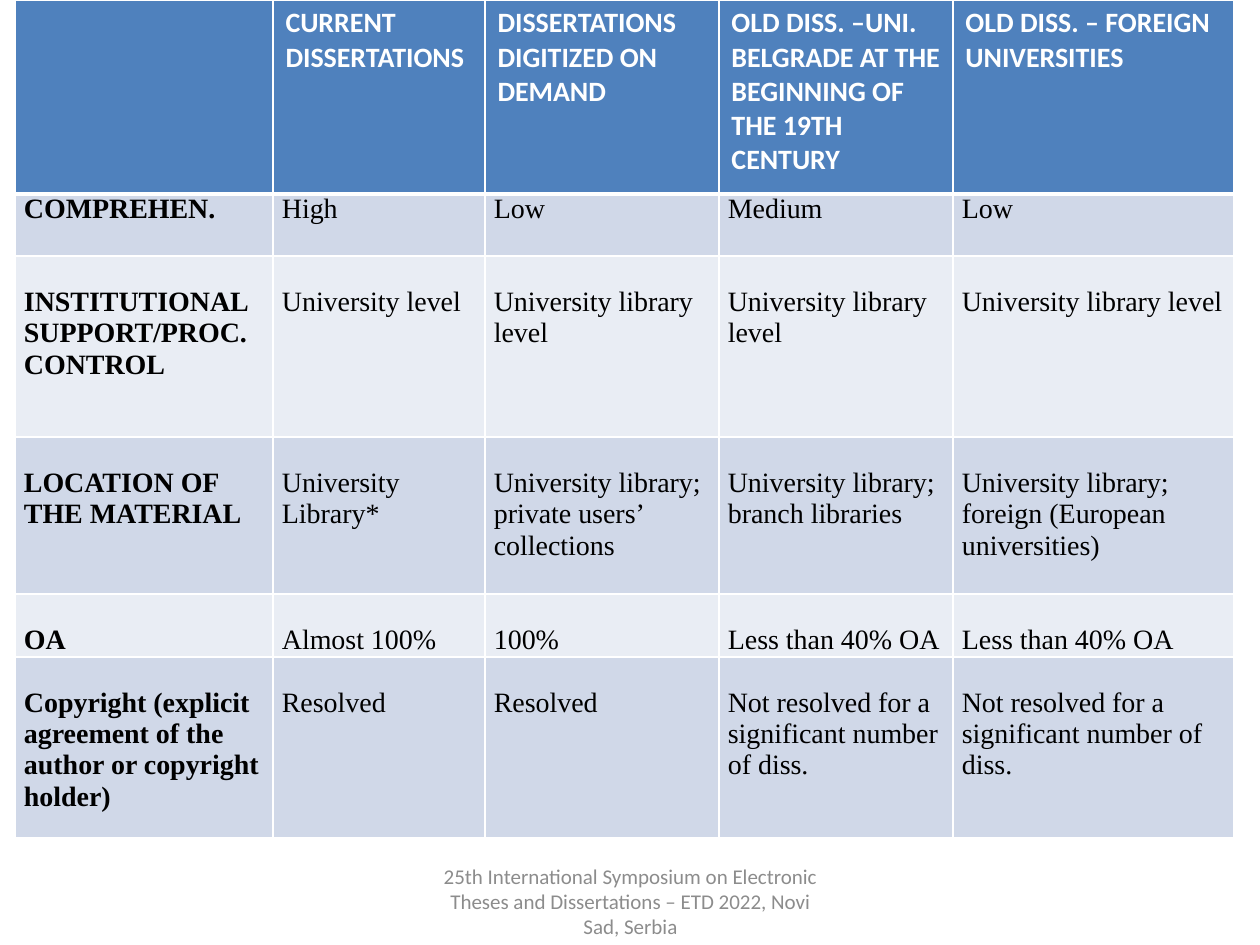
from dataclasses import dataclass

from lxml.etree import SubElement
from pptx import Presentation
from pptx.dml.color import RGBColor
from pptx.enum.text import MSO_ANCHOR, PP_ALIGN
from pptx.oxml.ns import qn
from pptx.util import Pt

EMU_PER_PX = 914400 / 126


def px(length: int) -> int:
    return round(length * EMU_PER_PX)


@dataclass(frozen=True)
class Theme:
    header_fill: str = "4F81BD"
    bands: tuple = ("D0D8E8", "E9EDF4")
    border: str = "FFFFFF"
    header_text: str = "FFFFFF"
    body_text: str = "000000"
    footer_text: str = "8C8C8C"
    sans: str = "Calibri"
    serif: str = "Times New Roman"
    table_size: int = 16
    footer_size: int = 12
    thin: int = 1
    thick: int = 3


@dataclass(frozen=True)
class Criterion:
    height: int
    top_inset: int
    label: str
    values: tuple


THEME = Theme()
COLUMN_WIDTHS = (258, 212, 234, 234, 281)
HEADER_HEIGHT = 194
LINE = 31
SIDE_INSET = 9
HEADINGS = (
    "",
    "CURRENT DISSERTATIONS",
    "DISSERTATIONS DIGITIZED ON DEMAND",
    "OLD DISS. –UNI. BELGRADE AT THE BEGINNING OF THE 19TH CENTURY",
    "OLD DISS. – FOREIGN UNIVERSITIES",
)
CRITERIA = (
    Criterion(62, 0, "COMPREHEN.", ("High", "Low", "Medium", "Low")),
    Criterion(181, LINE, "INSTITUTIONAL SUPPORT/PROC. CONTROL",
              ("University level",) + ("University library level",) * 3),
    Criterion(157, LINE, "LOCATION OF THE MATERIAL",
              ("University Library*",
               "University library; private users’ collections",
               "University library; branch libraries",
               "University library; foreign (European universities)")),
    Criterion(63, LINE, "OA",
              ("Almost 100%", "100%") + ("Less than 40% OA",) * 2),
    Criterion(181, LINE,
              "Copyright (explicit agreement of the author or copyright holder)",
              ("Resolved",) * 2
              + ("Not resolved for a significant number of diss.",) * 2),
)
FOOTER = ("25th International Symposium on Electronic Theses and "
          "Dissertations – ETD 2022, Novi Sad, Serbia")


def apply_format(target, values: dict) -> None:
    for attribute, value in values.items():
        setattr(target, attribute, value)


def format_font(font, name: str, size: int, color: str, bold: bool) -> None:
    apply_format(font, {"name": name, "size": Pt(size), "bold": bold})
    font.color.rgb = RGBColor.from_string(color)


def set_borders(cell, top: int, bottom: int) -> None:
    properties = cell._tc.get_or_add_tcPr()
    widths = {"lnL": THEME.thin, "lnR": THEME.thin, "lnT": top, "lnB": bottom}
    for position, (side, width) in enumerate(widths.items()):
        line = SubElement(properties, qn(f"a:{side}"), w=str(Pt(width)))
        properties.insert(position, line)
        fill = SubElement(line, qn("a:solidFill"))
        SubElement(fill, qn("a:srgbClr"), val=THEME.border)


def fill_cell(cell, text: str, fill: str, font: tuple) -> None:
    cell.fill.solid()
    cell.fill.fore_color.rgb = RGBColor.from_string(fill)
    cell.text = text
    format_font(cell.text_frame.paragraphs[0].font, *font)


def draw_header(table) -> None:
    font = (THEME.sans, THEME.table_size, THEME.header_text, True)
    for cell, heading in zip(table.rows[0].cells, HEADINGS):
        fill_cell(cell, heading, THEME.header_fill, font)
        set_borders(cell, THEME.thin, THEME.thick)


def draw_criterion(table, index: int, criterion: Criterion) -> None:
    fill = THEME.bands[index % 2]
    insets = {"margin_left": px(SIDE_INSET), "margin_right": px(SIDE_INSET),
              "margin_top": px(criterion.top_inset), "margin_bottom": 0}
    top = THEME.thin if index else THEME.thick
    texts = (criterion.label,) + criterion.values
    for column, text in enumerate(texts):
        cell = table.cell(index + 1, column)
        font = (THEME.serif, THEME.table_size, THEME.body_text, column == 0)
        fill_cell(cell, text, fill, font)
        apply_format(cell, insets)
        set_borders(cell, top, THEME.thin)


def draw_table(slide) -> None:
    heights = (HEADER_HEIGHT,) + tuple(c.height for c in CRITERIA)
    table = slide.shapes.add_table(
        len(heights), len(COLUMN_WIDTHS), px(15), 0,
        px(sum(COLUMN_WIDTHS)), px(sum(heights))).table
    table.horz_banding = False
    for column, width in zip(table.columns, COLUMN_WIDTHS):
        column.width = px(width)
    for row, height in zip(table.rows, heights):
        row.height = px(height)
    draw_header(table)
    for index, criterion in enumerate(CRITERIA):
        draw_criterion(table, index, criterion)


def draw_footer(slide) -> None:
    frame = slide.shapes.add_textbox(
        px(431), px(876), px(399), px(50)).text_frame
    apply_format(frame, {"word_wrap": True,
                         "vertical_anchor": MSO_ANCHOR.MIDDLE,
                         "text": FOOTER})
    paragraph = frame.paragraphs[0]
    paragraph.alignment = PP_ALIGN.CENTER
    format_font(paragraph.font, THEME.sans, THEME.footer_size,
                THEME.footer_text, False)


def main() -> None:
    presentation = Presentation()
    apply_format(presentation, {"slide_width": px(1260),
                                "slide_height": px(945)})
    slide = presentation.slides.add_slide(presentation.slide_layouts[6])
    draw_table(slide)
    draw_footer(slide)
    presentation.save("out.pptx")


if __name__ == "__main__":
    main()
